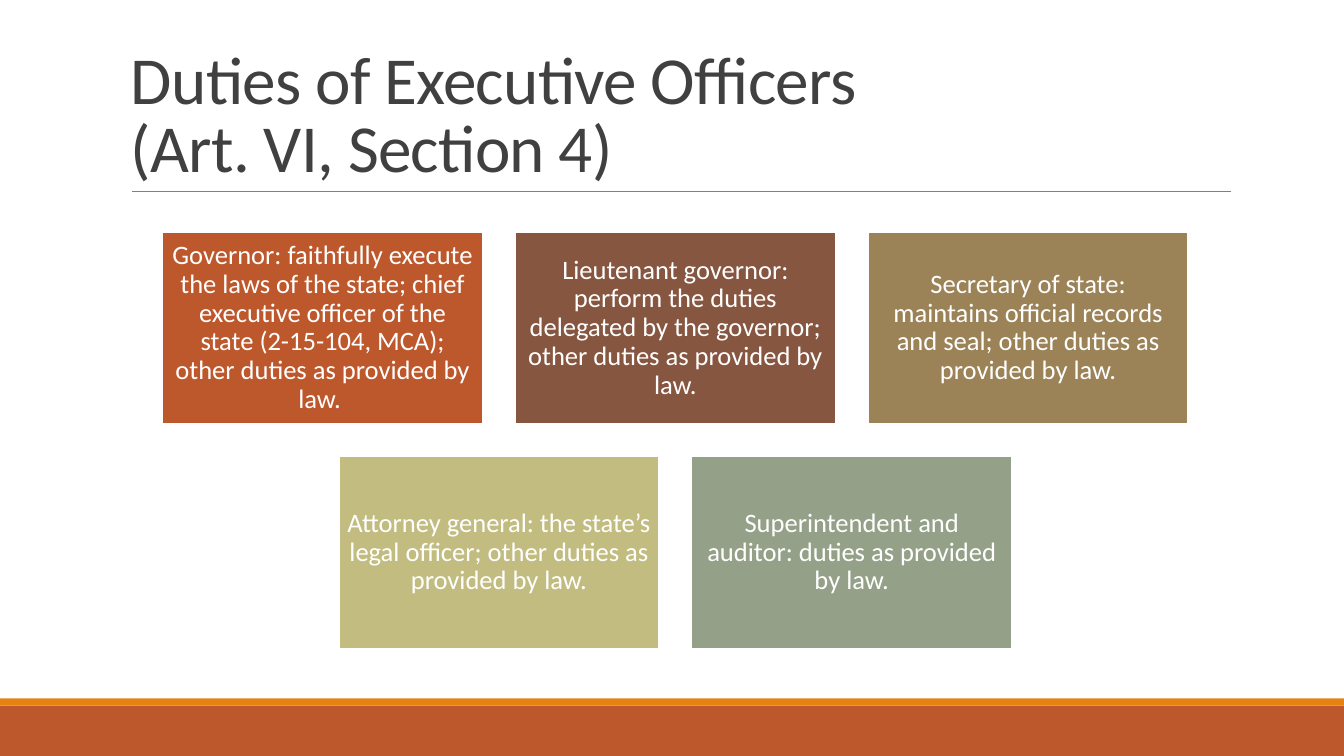
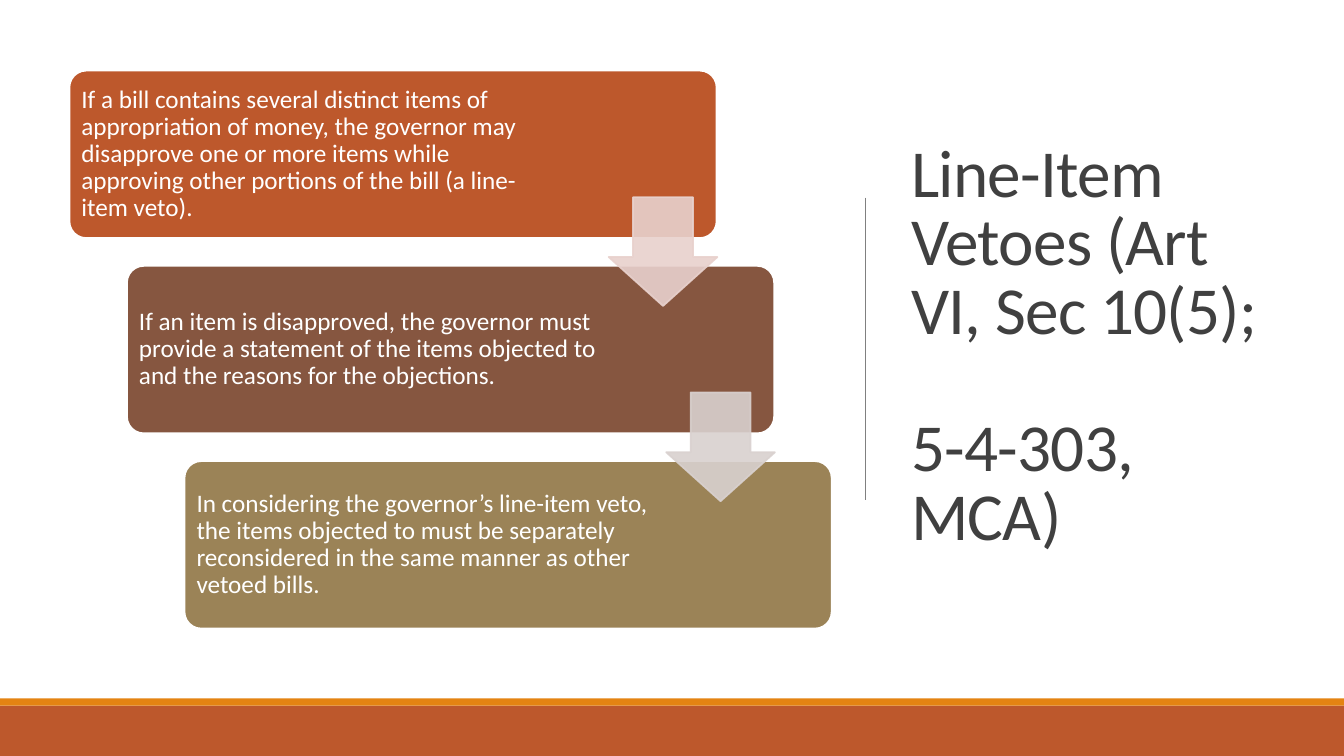
"""Build two slides on executive duties and line-item vetoes."""
from copy import deepcopy

from lxml.etree import SubElement
from pptx import Presentation
from pptx.dml.color import RGBColor
from pptx.enum.shapes import MSO_CONNECTOR, MSO_SHAPE
from pptx.enum.text import MSO_ANCHOR, PP_ALIGN
from pptx.oxml.ns import qn
from pptx.util import Cm, Pt

WIDE, HIGH = 33.87, 19.05
WHITE = RGBColor(0xFF, 0xFF, 0xFF)
INK = RGBColor(0x40, 0x40, 0x40)
GRAY = RGBColor(0x80, 0x80, 0x80)
AMBER = RGBColor(0xE4, 0x83, 0x12)
RUST = RGBColor(0xBD, 0x58, 0x2C)
BROWN = RGBColor(0x86, 0x56, 0x40)
TAN = RGBColor(0x9B, 0x83, 0x57)
OLIVE = RGBColor(0xC2, 0xBC, 0x80)
SAGE = RGBColor(0x94, 0xA0, 0x88)
BLUSH = RGBColor(0xE8, 0xD1, 0xCD)
STONE = RGBColor(0xD9, 0xD1, 0xCF)
FILLS = [RUST, BROWN, TAN, OLIVE, SAGE]

TITLE = {
    "font": {"name": "Calibri", "size": Pt(48)},
    "color": INK,
    "para": {"line_spacing": 0.85, "alignment": PP_ALIGN.LEFT},
    "track": "-50",
}
CARD = {
    "font": {"name": "Calibri", "size": Pt(19)},
    "color": WHITE,
    "para": {"line_spacing": 0.9, "alignment": PP_ALIGN.CENTER},
    "frame": dict.fromkeys(
        ["margin_left", "margin_right", "margin_top", "margin_bottom"], Cm(0.2)),
}
STEP = {
    "font": {"name": "Calibri", "size": Pt(18)},
    "color": WHITE,
    "para": {"line_spacing": 0.9, "alignment": PP_ALIGN.LEFT},
    "frame": {"margin_left": Cm(0.18), "margin_right": Cm(4.34),
              "margin_top": Cm(0.18), "margin_bottom": Cm(0.18)},
}

DUTIES = [
    ["Governor: faithfully execute the laws of the state; chief executive officer "
     "of the state (2-15-104, MCA); other duties as provided by law. ",
     "Lieutenant governor: perform the duties delegated by the governor; "
     "other duties as provided by law.",
     "Secretary of state: maintains official records and seal; "
     "other duties as provided by law."],
    ["Attorney general: the state’s legal officer; other duties as provided by law.",
     "Superintendent and auditor: duties as provided by law."],
]
STEPS = [
    "If a bill contains several distinct items of appropriation of money, the "
    "governor may disapprove one or more items while approving other portions "
    "of the bill (a line-item veto).",
    "If an item is disapproved, the governor must provide a statement of the "
    "items objected to and the reasons for the objections.",
    "In considering the governor’s line-item veto, the items objected to must be "
    "separately reconsidered in the same manner as other vetoed bills.",
]


def apply(thing, look):
    for key, value in look.items():
        setattr(thing, key, value)


def write(frame, text, style, anchor=MSO_ANCHOR.MIDDLE):
    apply(frame, {"word_wrap": True, "vertical_anchor": anchor,
                  **style.get("frame", {})})
    para = frame.paragraphs[0]
    para.text = text
    apply(para, style["para"])
    for run in para.runs:
        apply(run.font, style["font"])
        run.font.color.rgb = style["color"]
        if "track" in style:
            run._r.get_or_add_rPr().set("spc", style["track"])
    for br in para._p.findall(qn("a:br")):
        br.append(deepcopy(para.runs[0]._r.rPr))


def block(slide, kind, box, fill, edge=None, adjust=()):
    shape = slide.shapes.add_shape(kind, *map(Cm, box))
    shape.shadow.inherit = False
    shape.fill.solid()
    shape.fill.fore_color.rgb = fill
    if edge is None:
        shape.line.fill.background()
    else:
        shape.line.color.rgb = edge
        shape.line.width = Pt(1.25)
    for i, value in enumerate(adjust):
        shape.adjustments[i] = value
    return shape


def arrow(slide, box, color):
    shape = block(slide, MSO_SHAPE.DOWN_ARROW, box, color, color, (0.55, 0.45))
    for tint in shape._element.spPr.iter(qn("a:srgbClr")):
        SubElement(tint, qn("a:alpha"), val="90000")


def rule(slide, *ends):
    line = slide.shapes.add_connector(MSO_CONNECTOR.STRAIGHT, *map(Cm, ends))
    line.line.color.rgb = GRAY
    line.line.width = Pt(0.5)
    SubElement(line._element.spPr, qn("a:effectLst"))


def title(slide, text, box, anchor):
    area = slide.shapes.add_textbox(*map(Cm, box))
    write(area.text_frame, text, TITLE, anchor)


def start(deck):
    slide = deck.slides.add_slide(deck.slide_layouts[6])
    block(slide, MSO_SHAPE.RECTANGLE, (0, 17.78, WIDE, 1.27), RUST)
    block(slide, MSO_SHAPE.RECTANGLE, (0, 17.6, WIDE, 0.18), AMBER)
    return slide


def cards(slide, rows):
    wide, high, gap, mid, top = 8.08, 4.85, 0.81, 17.02, 5.84
    fills = iter(FILLS)
    for row, texts in enumerate(rows):
        left = mid - (len(texts) * (wide + gap) - gap) / 2
        for col, text in enumerate(texts):
            box = (left + col * (wide + gap), top + row * (high + gap), wide, high)
            card = block(slide, MSO_SHAPE.RECTANGLE, box, next(fills), WHITE)
            write(card.text_frame, text, CARD)


def stairs(slide, texts):
    across, down = 1.45, 4.92
    for i, text in enumerate(texts):
        box = (1.75 + i * across, 1.78 + i * down, 16.31, 4.22)
        step = block(slide, MSO_SHAPE.ROUNDED_RECTANGLE, box, FILLS[i], WHITE, (0.1,))
        write(step.text_frame, text, STEP)
    for i, color in enumerate([BLUSH, STONE]):
        arrow(slide, (15.34 + i * across, 4.97 + i * down, 2.74, 2.74), color)


def main():
    deck = Presentation()
    apply(deck, {"slide_width": Cm(WIDE), "slide_height": Cm(HIGH)})

    slide = start(deck)
    title(slide, "Duties of Executive Officers \n(Art. VI, Section 4)",
          (3.05, 0.79, 27.94, 4.04), MSO_ANCHOR.BOTTOM)
    rule(slide, 3.33, 4.83, 31.01, 4.83)
    cards(slide, DUTIES)

    slide = start(deck)
    title(slide, "Line-Item Vetoes (Art VI, Sec 10(5); \n5-4-303, MCA)",
          (22.71, 1.75, 9.37, 14.05), MSO_ANCHOR.MIDDLE)
    rule(slide, 21.82, 4.98, 21.82, 12.6)
    stairs(slide, STEPS)

    deck.save("out.pptx")


if __name__ == "__main__":
    main()
